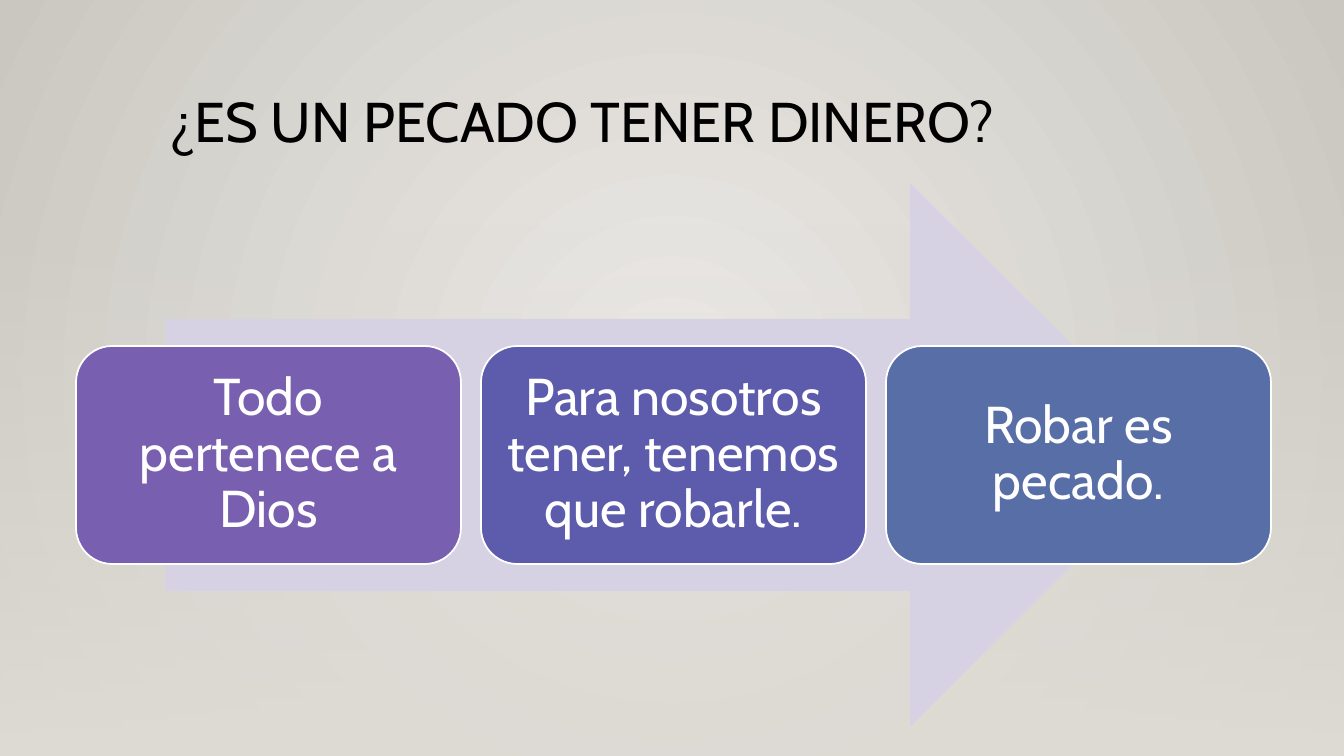
from lxml.etree import SubElement
from pptx import Presentation
from pptx.dml.color import RGBColor
from pptx.enum.shapes import MSO_SHAPE
from pptx.enum.text import MSO_ANCHOR, PP_ALIGN
from pptx.oxml.ns import qn
from pptx.util import Pt

PX = 914400 / 100.8
FONT = "Cabin"
BLACK = RGBColor(0x00, 0x00, 0x00)
WHITE = RGBColor(0xFF, 0xFF, 0xFF)
GLOW = RGBColor(0xEC, 0xEA, 0xE7)
EDGE = RGBColor(0xCA, 0xC7, 0xC1)
FLOOR = RGBColor(0xDF, 0xDB, 0xD5)
LAVENDER = RGBColor(0xD7, 0xD2, 0xE3)
PURPLE = RGBColor(0x79, 0x5F, 0xAF)
INDIGO = RGBColor(0x5D, 0x5B, 0xAB)
BLUE = RGBColor(0x58, 0x6E, 0xA6)


def px(*lengths):
    return [round(length * PX) for length in lengths]


def set_gradient(fill, first, last):
    fill.gradient()
    for stop, color, position in zip(fill.gradient_stops, (first, last), (0, 1)):
        stop.color.rgb = color
        stop.position = position


deck = Presentation()
deck.slide_width, deck.slide_height = px(1344, 756)
slide = deck.slides.add_slide(deck.slide_layouts[6])

set_gradient(slide.background.fill, GLOW, EDGE)
linear = slide.element.find(".//" + qn("a:lin"))
gradient = linear.getparent()
gradient.remove(linear)
circle = SubElement(gradient, qn("a:path"), {"path": "circle"})
SubElement(circle, qn("a:fillToRect"), dict.fromkeys("ltrb", "50000"))

floor = slide.shapes.add_shape(MSO_SHAPE.RECTANGLE, *px(0, 223, 1344, 533))
floor.shadow.inherit = False
floor.line.fill.background()
set_gradient(floor.fill, FLOOR, FLOOR)
floor.fill.gradient_angle = 270
top_color = floor.element.find(".//" + qn("a:srgbClr"))
SubElement(top_color, qn("a:alpha"), {"val": "0"})

title = slide.shapes.add_textbox(*px(160, 89, 1058, 116)).text_frame
title.word_wrap = True
heading = title.paragraphs[0]
heading.text = "¿ES UN PECADO TENER DINERO?"
heading.line_spacing = 0.9
heading.font.name = FONT
heading.font.size = Pt(40)
heading.font.color.rgb = BLACK

arrow = slide.shapes.add_shape(MSO_SHAPE.RIGHT_ARROW, *px(165, 183, 1017, 544))
arrow.shadow.inherit = False
arrow.fill.solid()
arrow.fill.fore_color.rgb = LAVENDER
arrow.line.fill.background()

steps = [
    ("Todo pertenece a Dios", PURPLE),
    ("Para nosotros tener, tenemos que robarle.", INDIGO),
    ("Robar es pecado.", BLUE),
]
for index, (statement, color) in enumerate(steps):
    step = slide.shapes.add_shape(
        MSO_SHAPE.ROUNDED_RECTANGLE, *px(76 + index * 405, 346, 385, 218)
    )
    step.shadow.inherit = False
    step.fill.solid()
    step.fill.fore_color.rgb = color
    step.line.color.rgb = WHITE
    step.line.width = Pt(1.25)

    frame = step.text_frame
    frame.word_wrap = True
    frame.vertical_anchor = MSO_ANCHOR.MIDDLE
    frame.margin_left, frame.margin_top, frame.margin_right, frame.margin_bottom = px(
        15, 15, 15, 15
    )
    paragraph = frame.paragraphs[0]
    paragraph.text = statement
    paragraph.alignment = PP_ALIGN.CENTER
    paragraph.line_spacing = 0.9
    paragraph.font.name = FONT
    paragraph.font.size = Pt(37)
    paragraph.font.color.rgb = WHITE

deck.save("out.pptx")
